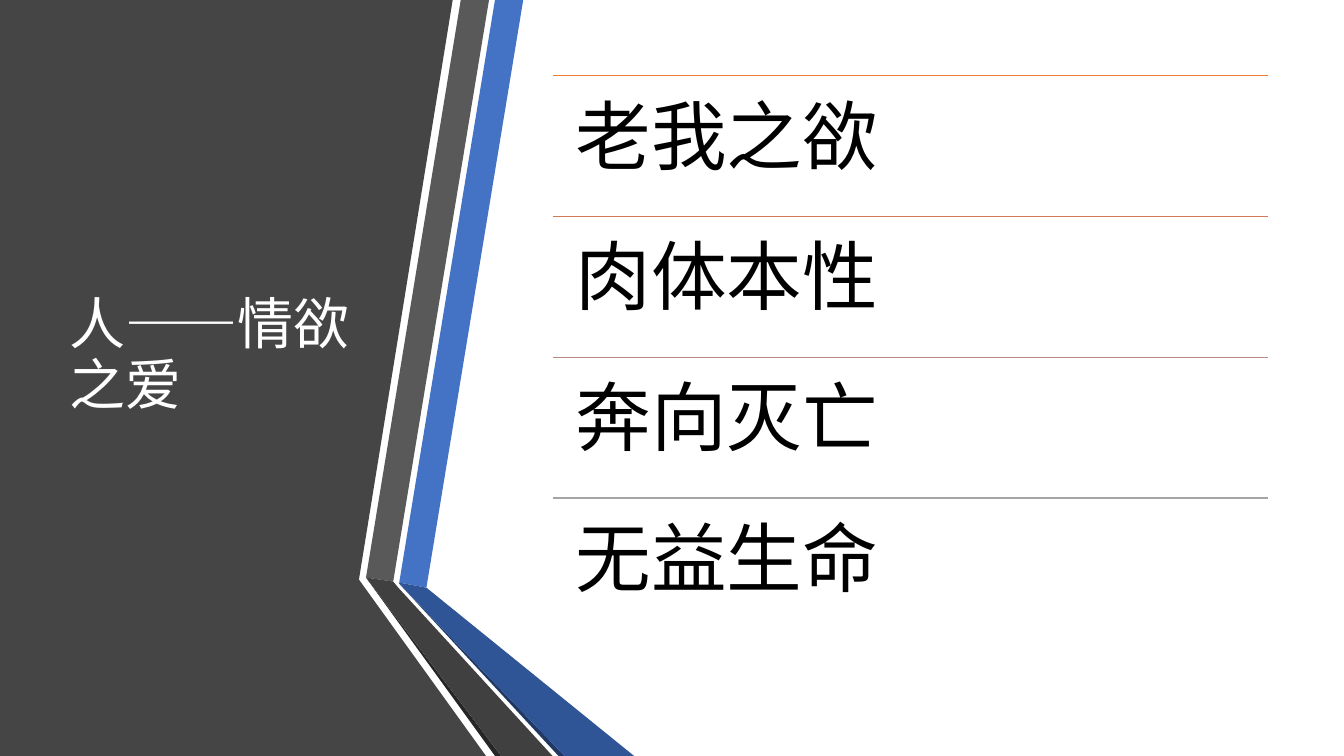
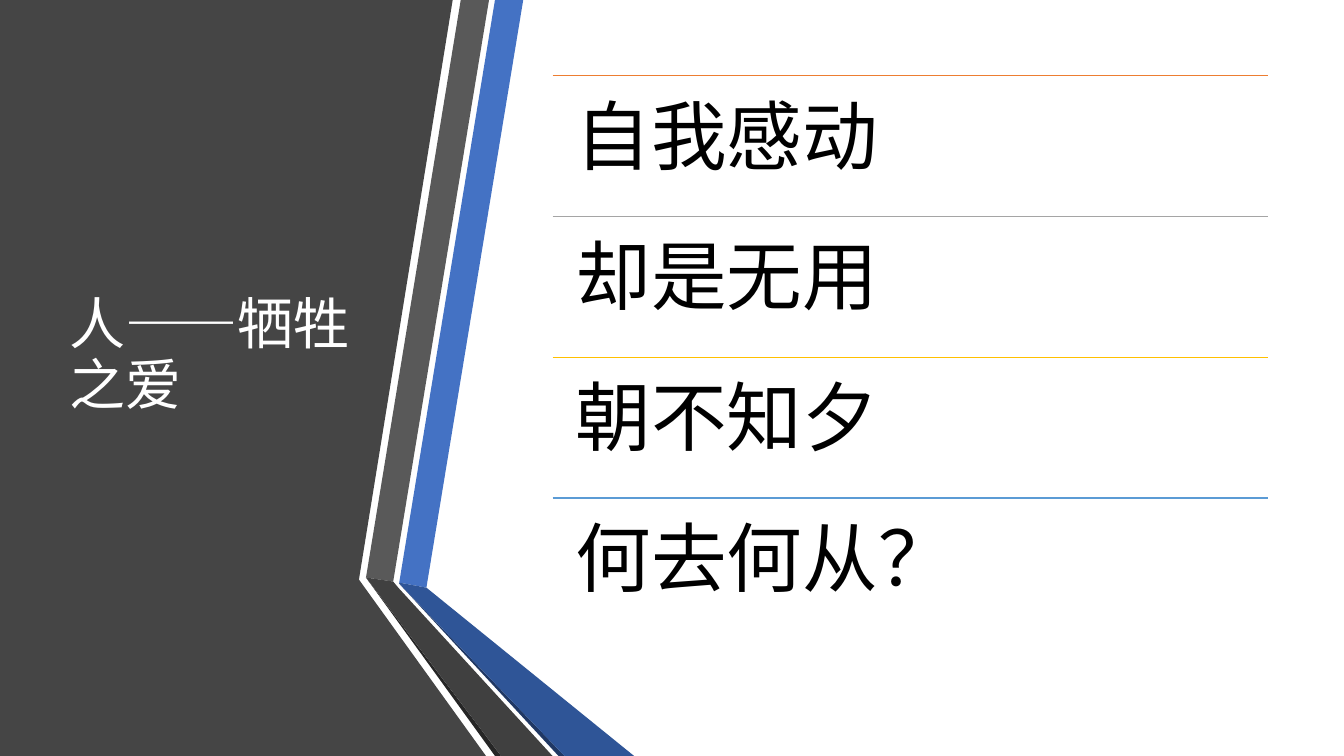
from dataclasses import dataclass

from lxml.etree import SubElement
from pptx import Presentation
from pptx.dml.color import RGBColor
from pptx.enum.shapes import MSO_CONNECTOR as Connector
from pptx.enum.text import MSO_ANCHOR as Anchor
from pptx.oxml.ns import qn
from pptx.util import Inches, Pt


@dataclass(frozen=True)
class Theme:
    font: str = "Noto Sans CJK SC"
    title_size: int = 40
    item_size: int = 54
    rule_width: int = 1
    line_spacing: float = 0.9
    background: str = "FFFFFF"
    title_color: str = "FFFFFF"
    item_color: str = "000000"
    panel: str = "454545"
    blue: str = "4472C4"
    blue_fold: str = "2F5597"
    blue_edge: str = "203864"
    gray: str = "595959"
    gray_fold: str = "404040"
    gray_edge: str = "262626"


THEME = Theme()
SLIDE_W, SLIDE_H = 13.33, 7.5

# Boxes: left, top, width, height in inches
TITLE_BOX = (0.59, 0.75, 3.04, 5.58)
LIST_BOX = (5.48, 0.75, 7.1, 5.59)
TITLE_INSETS = (0.1, 0.05)
ITEM_INSETS = (0.23, 0.23)

# Title panel and folded ribbons, from back to front
BACKDROP = [
    (THEME.panel, [(0, 0), (4.49, 0), (3.56, 5.75), (4.82, SLIDE_H), (0, SLIDE_H)]),
    (THEME.blue, [(3.96, 5.78), (4.23, 5.83), (5.19, 0), (4.91, 0)]),
    (THEME.gray, [(4.85, 0), (4.57, 0), (3.63, 5.73), (3.9, 5.77)]),
    (THEME.gray_edge, [(3.63, 5.73), (4.91, SLIDE_H), (4.97, SLIDE_H)]),
    (THEME.blue_edge, [(3.96, 5.79), (5.54, SLIDE_H), (5.6, SLIDE_H)]),
    (THEME.blue_fold, [(3.96, 5.79), (5.6, SLIDE_H), (6.29, SLIDE_H),
                       (4.23, 5.83), (3.96, 5.78)]),
    (THEME.gray_fold, [(5.48, SLIDE_H), (3.95, 5.83), (3.9, 5.77),
                       (3.63, 5.73), (4.97, SLIDE_H)]),
]

# Each slide: title, then items with the colour of the rule above them
SLIDES = [
    ("人——情欲之爱", [("老我之欲", "ED7D31"), ("肉体本性", "D17B5C"),
                    ("奔向灭亡", "B98A82"), ("无益生命", "A5A5A5")]),
    ("人——牺牲之爱", [("自我感动", "ED7D31"), ("却是无用", "A5A5A5"),
                    ("朝不知夕", "FFC000"), ("何去何从？", "5B9BD5")]),
]


def rgb(color):
    return RGBColor.from_string(color)


def add_polygon(slide, color, points):
    corners = [(Inches(x), Inches(y)) for x, y in points]
    builder = slide.shapes.build_freeform(*corners[0])
    builder.add_line_segments(corners[1:], close=True)
    polygon = builder.convert_to_shape()
    polygon.shadow.inherit = False
    polygon.fill.solid()
    polygon.fill.fore_color.rgb = rgb(color)
    polygon.line.fill.background()


def add_rule(slide, left, top, width, color):
    rule = slide.shapes.add_connector(
        Connector.STRAIGHT, Inches(left), Inches(top), Inches(left + width), Inches(top))
    rule.line.color.rgb = rgb(color)
    rule.line.width = Pt(THEME.rule_width)
    SubElement(rule._element.spPr, qn("a:effectLst"))


def add_text(slide, box, text, size, color, anchor, insets):
    frame = slide.shapes.add_textbox(*map(Inches, box)).text_frame
    frame.word_wrap = True
    frame.vertical_anchor = anchor
    frame.margin_left = frame.margin_right = Inches(insets[0])
    frame.margin_top = frame.margin_bottom = Inches(insets[1])
    paragraph = frame.paragraphs[0]
    paragraph.line_spacing = THEME.line_spacing
    run = paragraph.add_run()
    run.text = text
    run.font.size = Pt(size)
    run.font.color.rgb = rgb(color)
    run.font.name = THEME.font
    # Chinese text takes the East Asian typeface
    SubElement(run.font._element, qn("a:ea"), typeface=THEME.font)


def add_backdrop(slide):
    slide.background.fill.solid()
    slide.background.fill.fore_color.rgb = rgb(THEME.background)
    for color, points in BACKDROP:
        add_polygon(slide, color, points)


def add_ruled_list(slide, box, items):
    left, top, width, height = box
    row_height = height / len(items)
    for row, (text, rule_color) in enumerate(items):
        row_top = top + row * row_height
        add_rule(slide, left, row_top, width, rule_color)
        add_text(slide, (left, row_top, width, row_height), text,
                 THEME.item_size, THEME.item_color, Anchor.TOP, ITEM_INSETS)


def add_list_slide(deck, title, items):
    slide = deck.slides.add_slide(deck.slide_layouts[6])
    add_backdrop(slide)
    add_text(slide, TITLE_BOX, title, THEME.title_size, THEME.title_color,
             Anchor.MIDDLE, TITLE_INSETS)
    add_ruled_list(slide, LIST_BOX, items)


def main():
    deck = Presentation()
    deck.slide_width, deck.slide_height = Inches(SLIDE_W), Inches(SLIDE_H)
    for title, items in SLIDES:
        add_list_slide(deck, title, items)
    deck.save("out.pptx")


if __name__ == "__main__":
    main()
